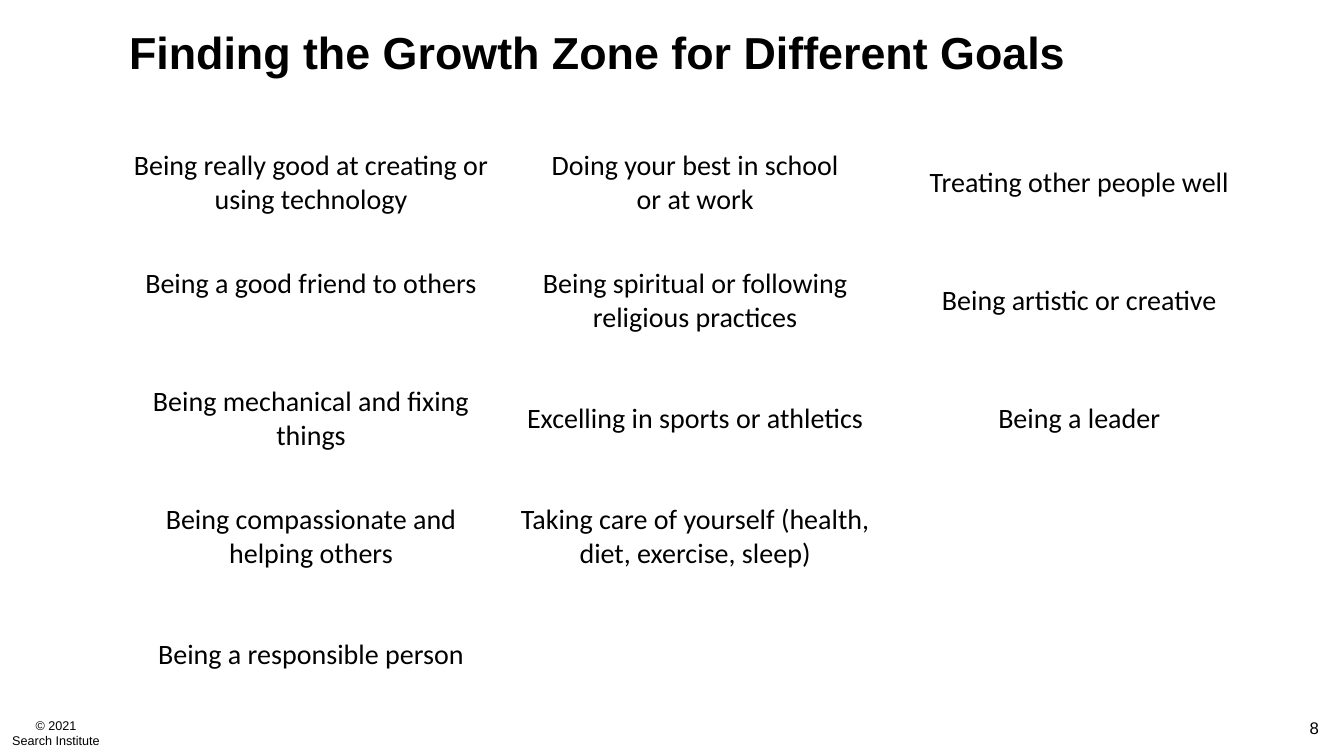
"""Build the slide listing goals for finding the growth zone."""
from pptx import Presentation
from pptx.dml.color import RGBColor
from pptx.enum.text import MSO_ANCHOR, PP_ALIGN
from pptx.util import Inches, Pt

INK = "000000"
COLUMN, ROW = 3.81, 1.17
LEFT, TOP = 1.18, 1.23
FOOTER_TOP, FOOTER_HEIGHT = 7.07, 0.4

GOALS = [
    ["Being really good at creating or using technology",
     "Doing your best in school\vor at work",
     "Treating other people well"],
    ["Being a good friend to others",
     "Being spiritual or following religious practices",
     "Being artistic or creative"],
    ["Being mechanical and fixing things",
     "Excelling in sports or athletics",
     "Being a leader"],
    ["Being compassionate and helping others",
     "Taking care of yourself (health, diet, exercise, sleep)",
     ""],
    ["Being a responsible person", "", ""],
]


def style(frame, font, size, align, bold=False):
    for paragraph in frame.paragraphs:
        paragraph.alignment = align
        for run in paragraph.runs:
            run.font.name = font
            run.font.size = Pt(size)
            run.font.bold = bold
            run.font.color.rgb = RGBColor.from_string(INK)


def add_footer(slide, text, left, width, size, align, anchor, inset):
    frame = slide.shapes.add_textbox(
        Inches(left), Inches(FOOTER_TOP), Inches(width), Inches(FOOTER_HEIGHT)).text_frame
    frame.word_wrap = True
    frame.vertical_anchor = anchor
    frame.margin_left = frame.margin_right = Inches(inset)
    frame.text = text
    style(frame, "Arial", size, align)


deck = Presentation()
deck.slide_width, deck.slide_height = Inches(13.33), Inches(7.5)
slide = deck.slides.add_slide(deck.slide_layouts[5])

title = slide.shapes.title
title.left, title.top = Inches(LEFT), Inches(0.21)
title.width, title.height = Inches(10.1), Inches(0.68)
title.text_frame.text = "Finding the Growth Zone for Different Goals"
title.text_frame.vertical_anchor = MSO_ANCHOR.MIDDLE
title.text_frame.paragraphs[0].line_spacing = 0.9
style(title.text_frame, "Arial", 32, PP_ALIGN.LEFT, bold=True)

add_footer(slide, "© 2021\nSearch Institute", 0, 1.11, 9,
           PP_ALIGN.CENTER, MSO_ANCHOR.MIDDLE, 0)
add_footer(slide, "8", 10.18, 3, 12, PP_ALIGN.RIGHT, MSO_ANCHOR.TOP, 0.1)

goals = slide.shapes.add_table(
    len(GOALS), len(GOALS[0]), Inches(LEFT), Inches(TOP),
    Inches(COLUMN * len(GOALS[0])), Inches(ROW * len(GOALS))).table
goals.first_row = goals.horz_banding = False
for row, texts in enumerate(GOALS):
    for column, text in enumerate(texts):
        goal = goals.cell(row, column)
        goal.fill.background()
        goal.vertical_anchor = MSO_ANCHOR.MIDDLE
        goal.margin_left = goal.margin_right = Inches(0.07)
        goal.margin_top = goal.margin_bottom = 0
        goal.text_frame.text = text
        style(goal.text_frame, "Calibri", 20, PP_ALIGN.CENTER)
goals.cell(1, 0).margin_bottom = Inches(0.33)

deck.save("out.pptx")
